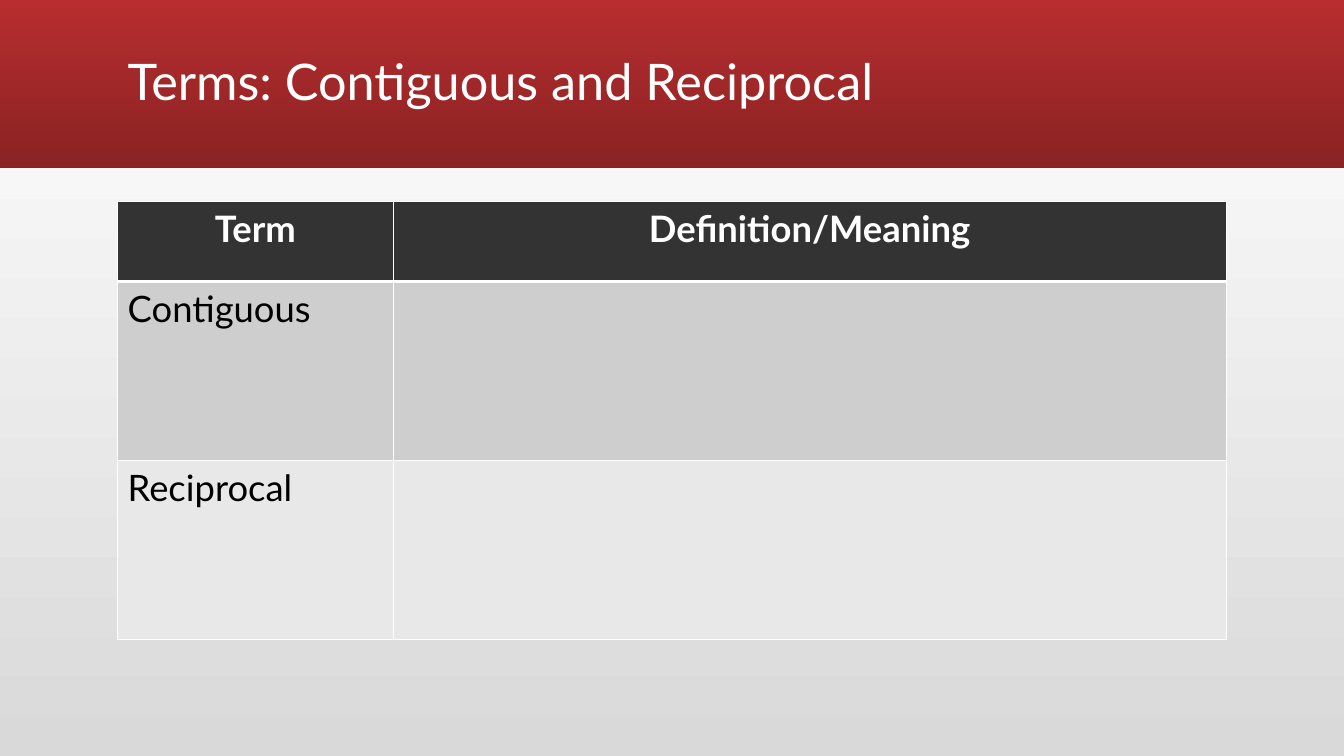
import pptx
import pptx.dml.color
import pptx.enum.shapes
import pptx.enum.text
import pptx.oxml
import pptx.oxml.ns
import pptx.util

Pt = pptx.util.Pt
ALIGN = pptx.enum.text.PP_ALIGN
ROWS = [("Term", "Definition/Meaning"), ("Contiguous", ""), ("Reciprocal", "")]
FILLS = ["333333", "CECECE", "E8E8E8"]


def tint(code):
    """Return the colour of a hex string."""
    return pptx.dml.color.RGBColor.from_string(code)


def style(para, color, **form):
    """Set the font of a paragraph from format values."""
    for key, value in {"name": "Lato", **form}.items():
        setattr(para.font, key, value)
    para.font.color.rgb = tint(color)


def blend(fill, angle, colors):
    """Fill with a two-colour gradient."""
    fill.gradient()
    fill.gradient_angle = angle
    for stop, color in zip(fill.gradient_stops, colors):
        stop.color.rgb = tint(color)


def edge(cell, widths):
    """Draw white cell borders: left, right, top, bottom."""
    props = cell._tc.get_or_add_tcPr()
    for i, (side, width) in enumerate(zip("LRTB", widths)):
        props.insert(i, pptx.oxml.parse_xml(
            f'<a:ln{side} {pptx.oxml.ns.nsdecls("a")} w="{Pt(width)}"><a:solidFill>'
            f'<a:srgbClr val="FFFFFF"/></a:solidFill></a:ln{side}>'))


def banner(slide, left, top, width, height):
    """Place the red band and the title on it."""
    band = slide.shapes.add_shape(
        pptx.enum.shapes.MSO_SHAPE.RECTANGLE,
        Pt(left), Pt(top), Pt(width), Pt(height))
    band.shadow.inherit = False
    band.line.fill.background()
    blend(band.fill, 270, ["B82D2F", "8A2223"])
    title = slide.shapes.title
    title.element.addprevious(band.element)
    place = {"left": left + 84, "top": top + 8, "width": width - 168, "height": height - 16}
    for key, value in place.items():
        setattr(title, key, Pt(value))
    frame = title.text_frame
    frame.text = "Terms: Contiguous and Reciprocal"
    frame.vertical_anchor = pptx.enum.text.MSO_ANCHOR.MIDDLE
    para = frame.paragraphs[0]
    para.alignment = ALIGN.LEFT
    para.line_spacing = 0.9
    style(para, "FFFFFF", size=Pt(36))


def terms(slide, left, top, width, height):
    """Place the table of terms."""
    grid = slide.shapes.add_table(
        len(ROWS), 2, Pt(left), Pt(top), Pt(width), Pt(height)).table
    first, head = 197, 57
    for col, size in zip(grid.columns, [first, width - first]):
        col.width = Pt(size)
    for r, (row, texts) in enumerate(zip(grid.rows, ROWS)):
        row.height = Pt((height - head) / 2 if r else head)
        for cell, text in zip(row.cells, texts):
            cell.fill.solid()
            cell.fill.fore_color.rgb = tint(FILLS[r])
            edge(cell, [1, 1, 3 if r == 1 else 1, 1 if r else 3])
            cell.text = text
            para = cell.text_frame.paragraphs[0]
            para.alignment = ALIGN.LEFT if r else ALIGN.CENTER
            style(para, "000000" if r else "FFFFFF", size=Pt(26), bold=r == 0)


def main():
    """Build and save the slide."""
    deck = pptx.Presentation()
    deck.slide_width, deck.slide_height = Pt(960), Pt(540)
    slide = deck.slides.add_slide(deck.slide_layouts[5])
    blend(slide.background.fill, 90, ["D9D9D9", "FFFFFF"])
    banner(slide, 0, 0, 960, 120)
    terms(slide, 84, 144, 792, 313)
    deck.save("out.pptx")


if __name__ == "__main__":
    main()
